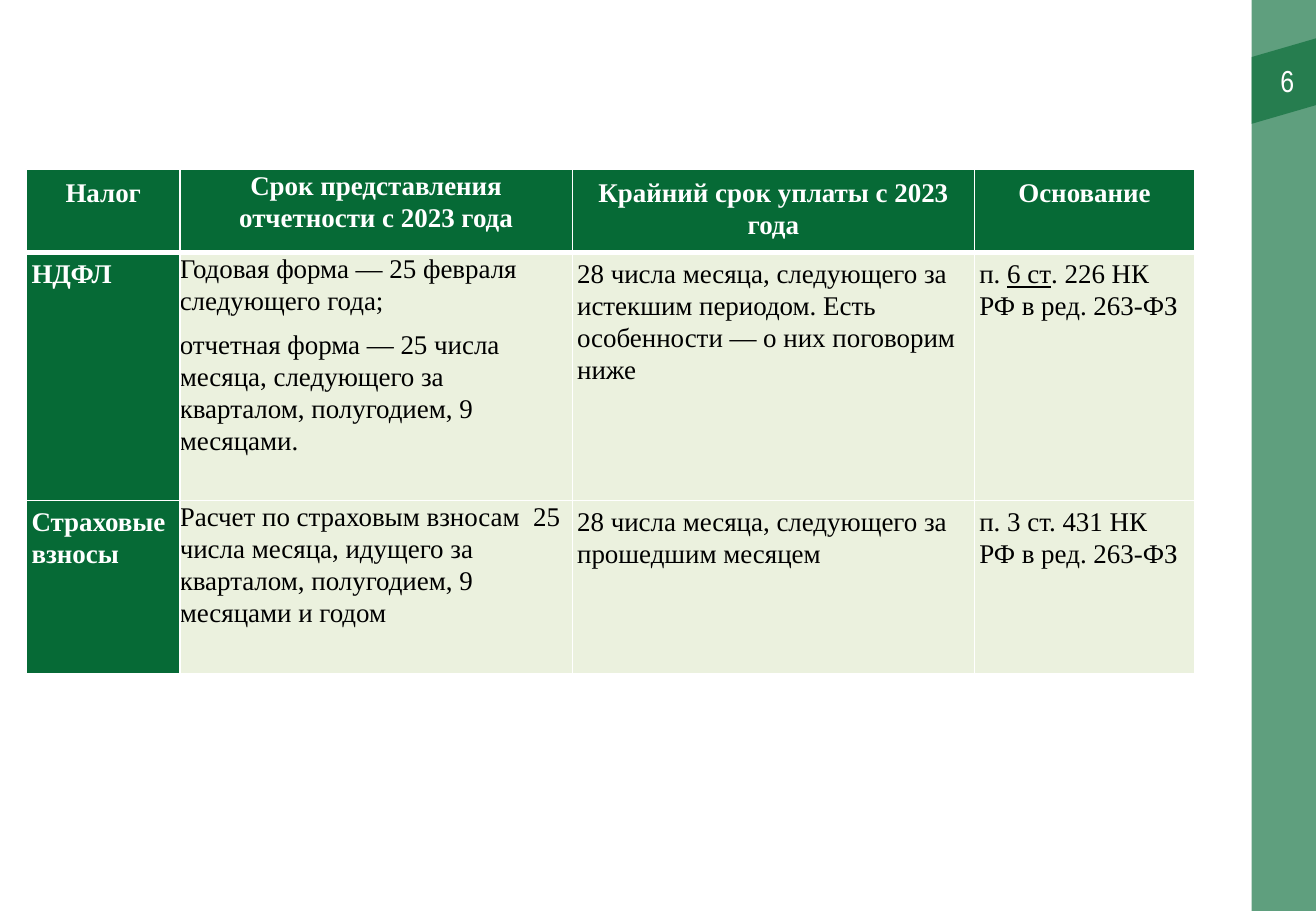
from lxml.etree import SubElement
from pptx import Presentation
from pptx.dml.color import RGBColor
from pptx.enum.shapes import MSO_SHAPE
from pptx.enum.text import MSO_ANCHOR, PP_ALIGN
from pptx.oxml.ns import qn
from pptx.util import Inches, Pt

GREEN = RGBColor(0x06, 0x6A, 0x36)
CREAM = RGBColor(0xEB, 0xF1, 0xDE)
WHITE = RGBColor(0xFF, 0xFF, 0xFF)
BLACK = RGBColor(0x00, 0x00, 0x00)

COLUMN_WIDTHS = [1.26, 3.23, 3.31, 1.81]
ROW_HEIGHTS = [0.64, 2.04, 1.43]

# Each cell is a list of paragraphs; underlined words stand between bars
ROWS = [
    [
        ["Налог"],
        ["Срок представления отчетности с 2023 года"],
        ["Крайний срок уплаты с 2023 года"],
        ["Основание"],
    ],
    [
        ["НДФЛ"],
        [
            "Годовая форма — 25 февраля следующего года;",
            "отчетная форма — 25 числа месяца, следующего за кварталом, полугодием, 9 месяцами.",
        ],
        ["28 числа месяца, следующего за истекшим периодом. Есть особенности — о них поговорим ниже"],
        ["п. |6 ст|. 226 НК РФ в ред. 263-ФЗ"],
    ],
    [
        ["Страховые взносы"],
        ["Расчет по страховым взносам  25 числа месяца, идущего за кварталом, полугодием, 9 месяцами и годом"],
        ["28 числа месяца, следующего за прошедшим месяцем"],
        ["п. 3 ст. 431 НК РФ в ред. 263-ФЗ"],
    ],
]


def set_margins(target, horizontal, vertical):
    target.margin_left = target.margin_right = Inches(horizontal)
    target.margin_top = target.margin_bottom = Inches(vertical)


def add_border(cell, side, width):
    line = SubElement(cell._tc.get_or_add_tcPr(), qn(f"a:{side}"), w=str(Pt(width)))
    SubElement(SubElement(line, qn("a:solidFill")), qn("a:srgbClr"), val=str(WHITE))


presentation = Presentation()
presentation.slide_width = Inches(10.83)
presentation.slide_height = Inches(7.5)
slide = presentation.slides.add_slide(presentation.slide_layouts[6])

# Side band and the slanted mark behind the page number
band = slide.shapes.add_shape(
    MSO_SHAPE.RECTANGLE, Inches(10.3), 0, Inches(0.55), Inches(7.5))
builder = slide.shapes.build_freeform(Inches(10.3), Inches(0.47))
builder.add_line_segments(
    [(Inches(x), Inches(y)) for x, y in [(10.85, 0.31), (10.85, 0.86), (10.3, 1.02)]])
mark = builder.convert_to_shape()
for shape in (band, mark):
    shape.shadow.inherit = False
    shape.line.fill.background()
    shape.fill.solid()
    shape.fill.fore_color.rgb = GREEN
    color = shape._element.spPr.find(qn("a:solidFill")).find(qn("a:srgbClr"))
    SubElement(color, qn("a:alpha"), val="64000")

# Page number
number_box = slide.shapes.add_textbox(
    Inches(9.98), Inches(0.46), Inches(0.79), Inches(0.4))
number_frame = number_box.text_frame
number_frame.word_wrap = True
number_frame.vertical_anchor = MSO_ANCHOR.MIDDLE
set_margins(number_frame, 0.12, 0.06)
paragraph = number_frame.paragraphs[0]
paragraph.alignment = PP_ALIGN.RIGHT
run = paragraph.add_run()
run.text = "6"
run.font.name = "Arial Narrow"
run.font.size = Pt(18)
run.font.color.rgb = WHITE

# Table of deadlines
table = slide.shapes.add_table(
    len(ROWS), len(COLUMN_WIDTHS), Inches(0.22), Inches(1.39),
    Inches(sum(COLUMN_WIDTHS)), Inches(sum(ROW_HEIGHTS))).table
table.horz_banding = False
for column, width in zip(table.columns, COLUMN_WIDTHS):
    column.width = Inches(width)
for row, height in zip(table.rows, ROW_HEIGHTS):
    row.height = Inches(height)

for row_index, row_texts in enumerate(ROWS):
    for column_index, texts in enumerate(row_texts):
        cell = table.cell(row_index, column_index)
        is_header = row_index == 0
        is_label = is_header or column_index == 0

        # Margins, borders and fill
        if column_index == 1:
            set_margins(cell, 0, 0)
        elif is_header:
            set_margins(cell, 0.05, 0.06)
        else:
            set_margins(cell, 0.04, 0.04)
        for side in ("lnL", "lnR", "lnT", "lnB"):
            thick = (row_index, side) in ((0, "lnB"), (1, "lnT"))
            add_border(cell, side, 3 if thick else 1)
        cell.fill.solid()
        cell.fill.fore_color.rgb = GREEN if is_label else CREAM

        # Text
        for index, text in enumerate(texts):
            frame = cell.text_frame
            paragraph = frame.add_paragraph() if index else frame.paragraphs[0]
            paragraph.alignment = PP_ALIGN.CENTER if is_header else PP_ALIGN.LEFT
            paragraph.line_spacing = 1.07
            paragraph.space_after = Pt(20 if is_header else 6.7 if len(texts) > 1 else 8)
            for part_index, part in enumerate(text.split("|")):
                run = paragraph.add_run()
                run.text = part
                run.font.color.rgb = WHITE if is_label else BLACK
                font_format = {
                    "name": "Times New Roman",
                    "size": Pt(16),
                    "bold": is_label,
                    "underline": part_index == 1,
                }
                for name, value in font_format.items():
                    setattr(run.font, name, value)

presentation.save("out.pptx")
